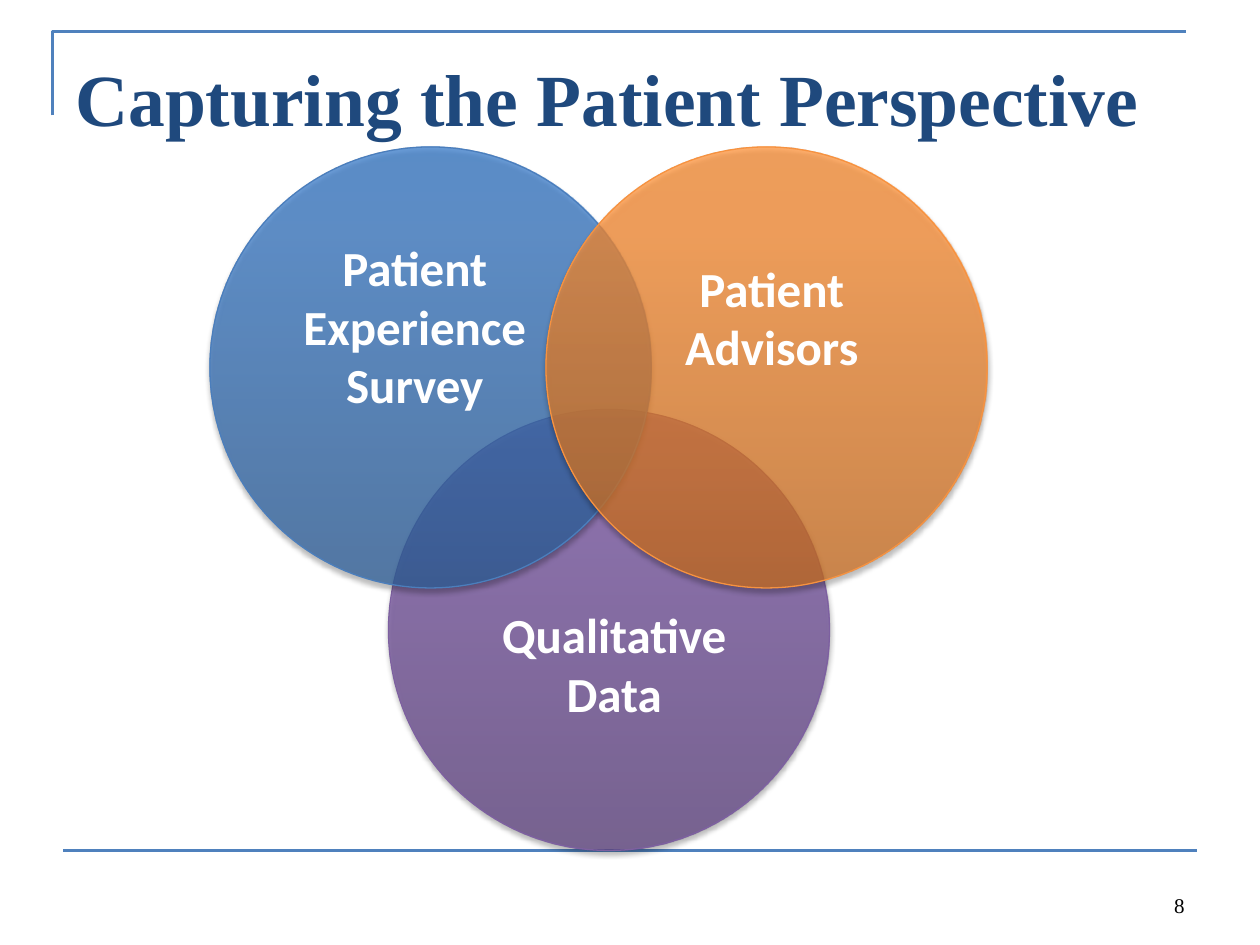
import pptx
import pptx.dml.color
import pptx.enum.shapes
import pptx.enum.text
import pptx.oxml
import pptx.oxml.ns
import pptx.util
import lxml.etree

RGBColor = pptx.dml.color.RGBColor
Align = pptx.enum.text.PP_ALIGN
Anchor = pptx.enum.text.MSO_ANCHOR

NAVY = RGBColor(0x1F, 0x49, 0x7D)
RULE_BLUE = RGBColor(0x4F, 0x81, 0xBD)
WHITE = RGBColor(0xFF, 0xFF, 0xFF)
BLACK = RGBColor(0x00, 0x00, 0x00)
BLUE_EDGE = RGBColor(0x4B, 0x7E, 0xBC)
BLUE_STOPS = [RGBColor(0x2F, 0x5F, 0x99), RGBColor(0x3D, 0x7C, 0xC7), RGBColor(0x3A, 0x7C, 0xCB)]
ORANGE_EDGE = RGBColor(0xF6, 0x92, 0x40)
ORANGE_STOPS = [RGBColor(0xCC, 0x6E, 0x20), RGBColor(0xFF, 0x90, 0x34), RGBColor(0xFF, 0x91, 0x36)]
PURPLE_EDGE = RGBColor(0x7D, 0x60, 0xA0)
PURPLE_STOPS = [RGBColor(0x5F, 0x44, 0x80), RGBColor(0x7B, 0x58, 0xA6), RGBColor(0x7C, 0x57, 0xA8)]

COLUMNS, ROWS = 120, 90
DIAMETER = 42
STOP_POSITIONS = (0, 80, 100)


def add_child(parent, tag, **attributes):
    child = lxml.etree.SubElement(parent, pptx.oxml.ns.qn(tag))
    for name, value in attributes.items():
        child.set(name, str(value))
    return child


def add_color(parent, color, opacity):
    node = add_child(parent, "a:srgbClr", val=color)
    add_child(node, "a:alpha", val=opacity * 1000)


def write_text(frame, text, font="Calibri", size=28, color=WHITE, bold=True, align=Align.CENTER):
    para = frame.paragraphs[0]
    para.alignment = align
    span = para.add_run()
    span.text = text
    span.font.name = font
    span.font.size = pptx.util.Pt(size)
    span.font.bold = bold
    span.font.color.rgb = color


class Page:
    def __init__(self, deck):
        self.column = deck.slide_width / COLUMNS
        self.row = deck.slide_height / ROWS
        self.shapes = deck.slides.add_slide(deck.slide_layouts[6]).shapes

    def place(self, *lengths):
        units = (self.column, self.row) * 2
        return [round(length * unit) for length, unit in zip(lengths, units)]

    def rule(self, left, row, right):
        line = self.shapes.add_connector(
            pptx.enum.shapes.MSO_CONNECTOR.STRAIGHT, *self.place(left, row, right, row))
        self.outline(line, RULE_BLUE, 1.5)
        add_child(line._element.spPr, "a:effectLst")

    def corner(self, start, *points):
        builder = self.shapes.build_freeform(*self.place(*start), scale=1.0)
        builder.add_line_segments([self.place(*point) for point in points], close=False)
        corner = builder.convert_to_shape()
        corner.fill.background()
        corner.shadow.inherit = False
        self.outline(corner, RULE_BLUE, 1.5)

    def outline(self, shape, color, width):
        shape.line.color.rgb = color
        shape.line.width = pptx.util.Pt(width)

    def circle(self, left, top, stops, edge, opacity=74):
        circle = self.shapes.add_shape(
            pptx.enum.shapes.MSO_SHAPE.OVAL, *self.place(left, top, DIAMETER, DIAMETER))
        circle.fill.gradient()
        circle.fill.gradient_angle = 90
        properties = circle._element.spPr
        stop_list = properties.find(".//" + pptx.oxml.ns.qn("a:gsLst"))
        for old_stop in list(stop_list):
            stop_list.remove(old_stop)
        for position, color in zip(STOP_POSITIONS, stops):
            add_color(add_child(stop_list, "a:gs", pos=position * 1000), color, opacity)
        self.outline(circle, edge, 0.75)
        circle.shadow.inherit = False
        effects = properties.find(pptx.oxml.ns.qn("a:effectLst"))
        shadow = add_child(effects, "a:outerShdw", blurRad=pptx.util.Pt(3.1),
                           dist=pptx.util.Pt(1.8), dir=90 * 60000, rotWithShape=0)
        add_color(shadow, BLACK, 35)

    def text(self, left, top, width, height, text, anchor=Anchor.TOP, inset=0.05, **style):
        box = self.shapes.add_textbox(*self.place(left, top, width, height))
        frame = box.text_frame
        frame.word_wrap = True
        frame.vertical_anchor = anchor
        frame.margin_top = pptx.util.Inches(inset)
        write_text(frame, text, **style)


def main():
    deck = pptx.Presentation()
    deck.slide_width = pptx.util.Inches(10)
    deck.slide_height = pptx.util.Inches(7.5)
    page = Page(deck)
    page.corner((5, 11), (5, 3), (113, 3))
    page.rule(6, 81, 114)
    page.circle(37, 39, PURPLE_STOPS, PURPLE_EDGE)
    page.text(6, 3.6, 108, 15, "Capturing the Patient Perspective", inset=0.12,
              font="Times New Roman", size=42, color=NAVY, align=Align.LEFT)
    page.circle(20, 14, BLUE_STOPS, BLUE_EDGE)
    page.circle(52, 14, ORANGE_STOPS, ORANGE_EDGE, opacity=72)
    page.text(24, 22, 31, 18.1, "Patient Experience Survey")
    page.text(58, 24, 31, 12.5, "Patient Advisors")
    page.text(43, 57, 31, 12.5, "Qualitative Data")
    page.text(86, 82, 28, 6, "8", anchor=Anchor.BOTTOM, font="Times New Roman",
              size=12, color=BLACK, bold=False, align=Align.RIGHT)
    deck.save("out.pptx")


if __name__ == "__main__":
    main()
